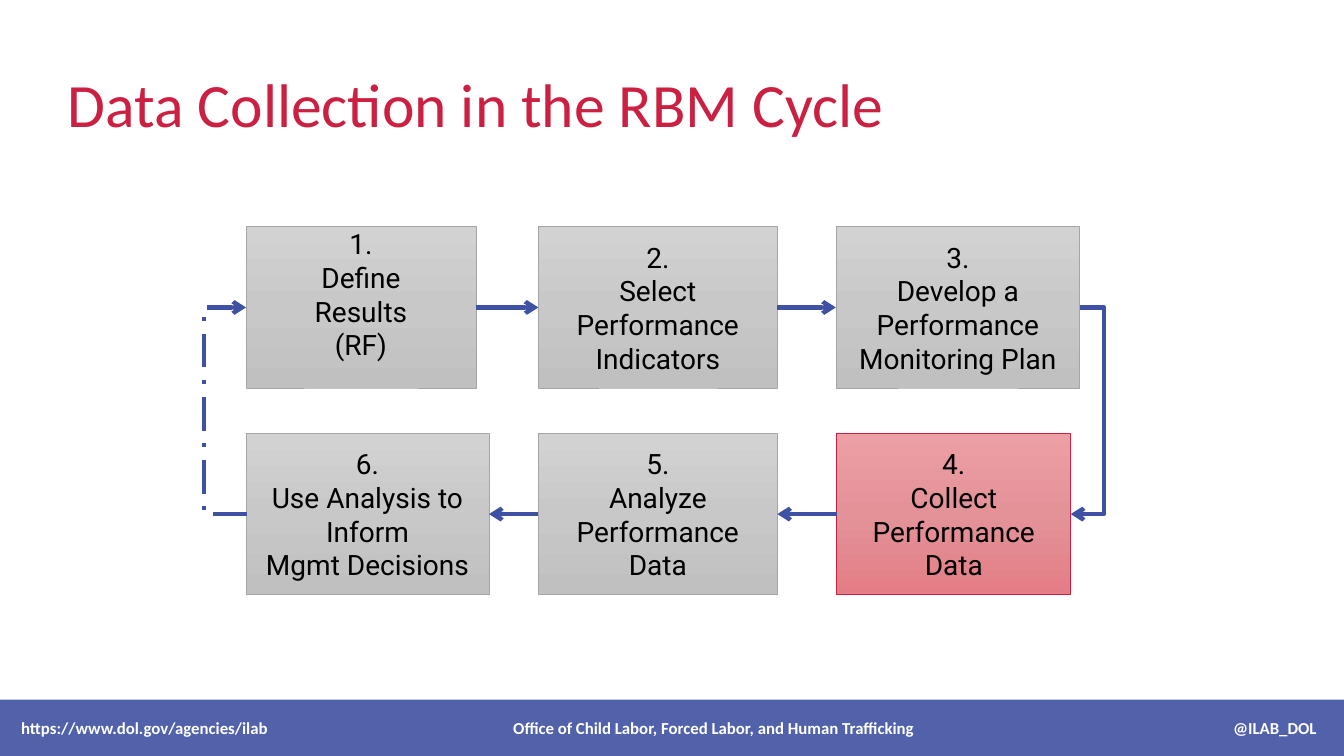
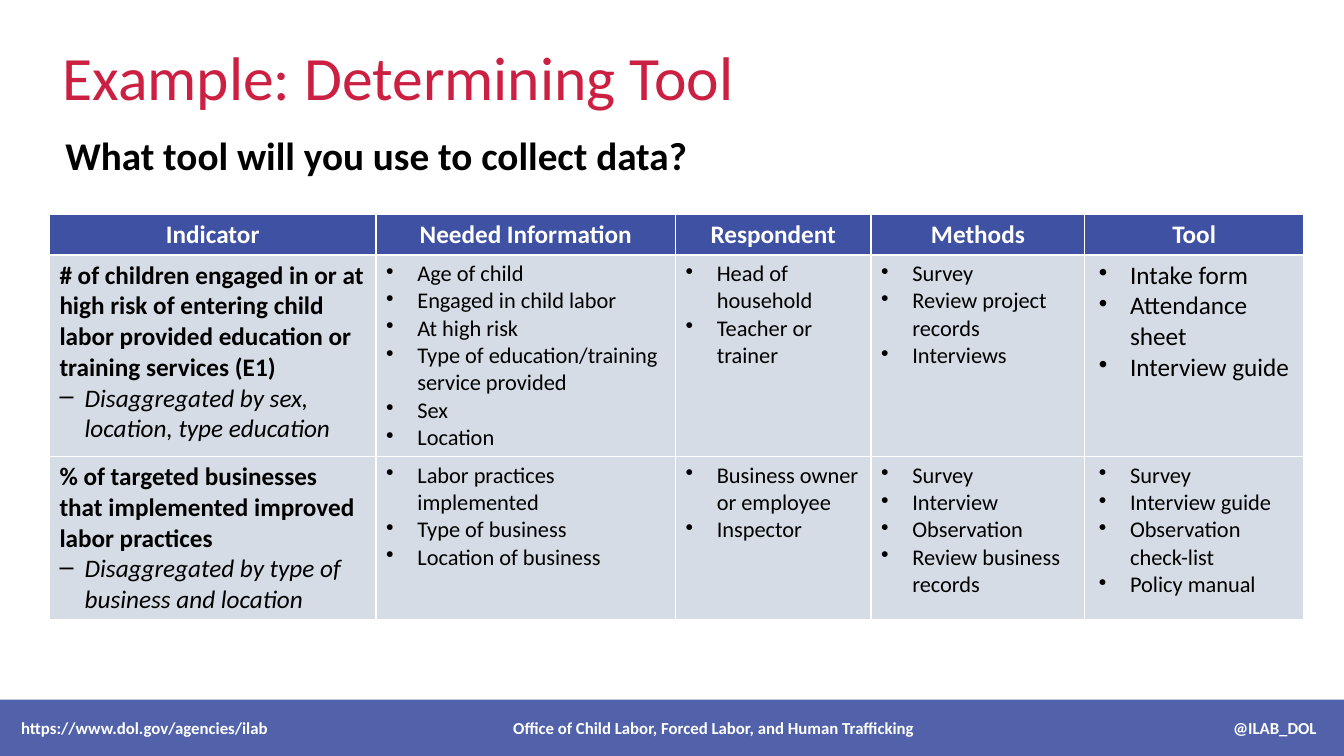
from copy import deepcopy

from lxml.etree import SubElement
from pptx import Presentation
from pptx.dml.color import RGBColor
from pptx.enum.dml import MSO_LINE
from pptx.enum.shapes import MSO_CONNECTOR, MSO_SHAPE
from pptx.enum.text import MSO_ANCHOR, MSO_AUTO_SIZE, PP_ALIGN
from pptx.oxml.ns import qn
from pptx.util import Inches, Pt

COLORS = {
    "red": "CB2042",
    "blue": "3F51A2",
    "gray": "A5A5A5",
    "cell": "D6DCE5",
    "black": "000000",
    "white": "FFFFFF",
}
GRAY_STEP = (("D2D2D2", "C8C8C8", "C0C0C0"), "gray")
RED_STEP = (("EC9FA5", "E39298", "E47D85"), "red")

SLIDE_WIDTH, SLIDE_HEIGHT = 13.33, 7.5
FOOTER_TOP, FOOTER_INSET = 6.94, 0.21
FOOTER = (
    "https://www.dol.gov/agencies/ilab",
    "Office of Child Labor, Forced Labor, and Human Trafficking",
    "@ILAB_DOL",
)
FOOTER_TABS = (("ctr", 7.08), ("r", 13.06))

CYCLE_TITLE = "Data Collection in the RBM Cycle"
STEP_HEIGHT = 1.6
TOP_ROW, BOTTOM_ROW = 2.25, 4.3
STEPS = [
    (2.44, TOP_ROW, 2.28, GRAY_STEP, ["1.", "Define", "Results", "(RF)"]),
    (5.34, TOP_ROW, 2.37, GRAY_STEP, ["2.", "Select", "Performance", "Indicators"]),
    (8.29, TOP_ROW, 2.42, GRAY_STEP, ["3.", "Develop a", "Performance", "Monitoring Plan"]),
    (8.3, BOTTOM_ROW, 2.32, RED_STEP, ["4.", "Collect", "Performance", "Data"]),
    (5.34, BOTTOM_ROW, 2.37, GRAY_STEP, ["5.", "Analyze", "Performance", "Data"]),
    (2.44, BOTTOM_ROW, 2.41, GRAY_STEP, ["6.", "Use Analysis to", "Inform", "Mgmt Decisions"]),
]
LEFT_SIDE, RIGHT_SIDE = 1, 3
STRAIGHT_ARROWS = [
    (0, RIGHT_SIDE, 1, LEFT_SIDE),
    (1, RIGHT_SIDE, 2, LEFT_SIDE),
    (3, LEFT_SIDE, 4, RIGHT_SIDE),
    (4, LEFT_SIDE, 5, RIGHT_SIDE),
]
TOP_MIDDLE = TOP_ROW + STEP_HEIGHT / 2
BOTTOM_MIDDLE = BOTTOM_ROW + STEP_HEIGHT / 2

TOOL_TITLE = "Example: Determining Tool"
QUESTION = "What tool will you use to collect data?"
COLUMN_WIDTHS = (3.24, 2.97, 1.94, 2.12, 2.17)
ROW_HEIGHTS = (0.4, 2, 1.62)
HEADINGS = ("Indicator", "Needed Information", "Respondent", "Methods", "Tool")
INDICATORS = [
    {
        "name": "# of children engaged in or at high risk of entering child labor "
                "provided education or training services (E1)",
        "split": "Disaggregated by sex, location, type education",
        "lists": [
            ["Age of child", "Engaged in child labor", "At high risk",
             "Type of education/training service provided", "Sex", "Location"],
            ["Head of household", "Teacher or trainer"],
            ["Survey", "Review project records", "Interviews"],
            ["Intake form", "Attendance sheet", "Interview guide"],
        ],
        "tool_size": 18,
    },
    {
        "name": "% of targeted businesses that implemented improved labor practices",
        "split": "Disaggregated by type of business and location",
        "lists": [
            ["Labor practices implemented", "Type of business", "Location of business"],
            ["Business owner or employee", "Inspector"],
            ["Survey", "Interview", "Observation", "Review business records"],
            ["Survey", "Interview guide", "Observation check-list", "Policy manual"],
        ],
        "tool_size": 16,
    },
]


def rgb(name):
    return RGBColor.from_string(COLORS.get(name, name))


def write(frame, text, size=16, color="black", font="Calibri", bold=False,
          italic=False, align=PP_ALIGN.LEFT, spacing=None, bullet=None, indent=0.31):
    paragraph = frame.add_paragraph() if frame.text else frame.paragraphs[0]
    paragraph.alignment = align
    if spacing:
        paragraph.line_spacing = spacing
    if bullet:
        properties = paragraph._p.get_or_add_pPr()
        properties.set("marL", str(Inches(indent)))
        properties.set("indent", str(-Inches(indent)))
        SubElement(properties, qn("a:buChar")).set("char", bullet)
    run = paragraph.add_run()
    run.text = text
    run.font.size = Pt(size)
    run.font.name = font
    run.font.bold = bold
    run.font.italic = italic
    run.font.color.rgb = rgb(color)
    return paragraph


def add_rectangle(slide, left, top, width, height):
    rectangle = slide.shapes.add_shape(
        MSO_SHAPE.RECTANGLE, Inches(left), Inches(top), Inches(width), Inches(height))
    rectangle.shadow.inherit = False
    return rectangle


def add_footer(slide):
    band = add_rectangle(slide, 0, FOOTER_TOP, SLIDE_WIDTH, SLIDE_HEIGHT - FOOTER_TOP)
    band.fill.solid()
    band.fill.fore_color.rgb = rgb("blue")
    band.line.fill.background()
    tint = band._element.spPr.find(".//" + qn("a:srgbClr"))
    SubElement(tint, qn("a:alpha")).set("val", "90000")
    frame = band.text_frame
    frame.margin_left = Inches(FOOTER_INSET)
    frame.vertical_anchor = MSO_ANCHOR.MIDDLE
    line = write(frame, "\t".join(FOOTER), size=12, color="white", bold=True)
    tabs = SubElement(line._p.get_or_add_pPr(), qn("a:tabLst"))
    for align, position in FOOTER_TABS:
        tab = SubElement(tabs, qn("a:tab"))
        tab.set("pos", str(Inches(position - FOOTER_INSET)))
        tab.set("algn", align)


def add_titled_slide(deck, text, left, top, width):
    slide = deck.slides.add_slide(deck.slide_layouts[5])
    title = slide.shapes.title
    title.left, title.top = Inches(left), Inches(top)
    title.width, title.height = Inches(width), Inches(1.05)
    title.text_frame.auto_size = MSO_AUTO_SIZE.NONE
    title.text_frame.vertical_anchor = MSO_ANCHOR.BOTTOM
    write(title.text_frame, text, size=44, color="red", spacing=0.9)
    add_footer(slide)
    return slide


def add_step(slide, left, top, width, look, lines):
    shades, border = look
    step = add_rectangle(slide, left, top, width, STEP_HEIGHT)
    step.fill.gradient()
    step.fill.gradient_angle = 270
    stops = step._element.spPr.find(".//" + qn("a:gsLst"))
    stops.append(deepcopy(stops[0]))
    for stop, shade, position in zip(step.fill.gradient_stops, shades, (0, 0.5, 1)):
        stop.color.rgb = rgb(shade)
        stop.position = position
    step.line.color.rgb = rgb(border)
    step.line.width = Pt(0.5)
    frame = step.text_frame
    frame.word_wrap = False
    frame.vertical_anchor = MSO_ANCHOR.MIDDLE
    for line in lines:
        write(frame, line, size=20, font="Roboto", align=PP_ALIGN.CENTER)
    return step


def style_arrow(arrow, dash=None):
    arrow.line.color.rgb = rgb("blue")
    arrow.line.width = Pt(3)
    if dash:
        arrow.line.dash_style = dash
    outline = arrow._element.spPr.find(qn("a:ln"))
    SubElement(outline, qn("a:tailEnd")).set("type", "arrow")
    SubElement(arrow._element.spPr, qn("a:effectLst"))


def add_elbow_arrow(slide, begin, end, via, turned=False, dash=None):
    first, last = (end, begin) if turned else (begin, end)
    arrow = slide.shapes.add_connector(
        MSO_CONNECTOR.ELBOW, *(Inches(value) for value in (*first, *last)))
    if turned:
        arrow.rotation = 180
    bend = (via - begin[0]) / (end[0] - begin[0])
    geometry = arrow._element.spPr.find(qn("a:prstGeom"))
    adjustments = geometry.find(qn("a:avLst"))
    if adjustments is None:
        adjustments = SubElement(geometry, qn("a:avLst"))
    guide = SubElement(adjustments, qn("a:gd"))
    guide.set("name", "adj1")
    guide.set("fmla", f"val {round(bend * 100000)}")
    style_arrow(arrow, dash)


def build_cycle(deck):
    slide = add_titled_slide(deck, CYCLE_TITLE, 0.57, 0.4, 11.24)
    steps = [add_step(slide, *step) for step in STEPS]
    steps[0].text_frame.vertical_anchor = MSO_ANCHOR.TOP
    steps[0].text_frame.margin_top = 0
    for source, source_side, target, target_side in STRAIGHT_ARROWS:
        arrow = slide.shapes.add_connector(MSO_CONNECTOR.STRAIGHT, 0, 0, 0, 0)
        arrow.begin_connect(steps[source], source_side)
        arrow.end_connect(steps[target], target_side)
        style_arrow(arrow)
    add_elbow_arrow(slide, (10.71, TOP_MIDDLE), (10.62, BOTTOM_MIDDLE), 10.95)
    add_elbow_arrow(slide, (2.45, BOTTOM_MIDDLE), (2.44, TOP_MIDDLE), 2.02,
                    turned=True, dash=MSO_LINE.LONG_DASH_DOT)


def fill_cell(cell, color):
    cell.fill.solid()
    cell.fill.fore_color.rgb = rgb(color)
    return cell.text_frame


def build_tools(deck):
    slide = add_titled_slide(deck, TOOL_TITLE, 0.52, 0.13, 11.57)
    question = slide.shapes.add_textbox(
        Inches(0.55), Inches(1.31), Inches(11.59), Inches(0.6)).text_frame
    question.word_wrap = True
    write(question, QUESTION, size=28, bold=True, spacing=0.9)

    tools = slide.shapes.add_table(
        len(ROW_HEIGHTS), len(COLUMN_WIDTHS), Inches(0.49), Inches(2.13),
        Inches(sum(COLUMN_WIDTHS)), Inches(sum(ROW_HEIGHTS))).table
    for column, width in zip(tools.columns, COLUMN_WIDTHS):
        column.width = Inches(width)
    for row, height in zip(tools.rows, ROW_HEIGHTS):
        row.height = Inches(height)
    for column, heading in enumerate(HEADINGS):
        write(fill_cell(tools.cell(0, column), "blue"), heading, size=18,
              color="white", bold=True, align=PP_ALIGN.CENTER)
    tool_column = len(HEADINGS) - 1
    for row, indicator in enumerate(INDICATORS, 1):
        frame = fill_cell(tools.cell(row, 0), "cell")
        write(frame, indicator["name"], size=18, bold=True)
        write(frame, indicator["split"], size=18, italic=True, bullet="–", indent=0.25)
        for column, items in enumerate(indicator["lists"], 1):
            frame = fill_cell(tools.cell(row, column), "cell")
            size = indicator["tool_size"] if column == tool_column else 16
            for item in items:
                write(frame, item, size=size, bullet="•")
        tools.cell(row, tool_column).margin_left = Inches(0.14)


def main():
    deck = Presentation()
    deck.slide_width, deck.slide_height = Inches(SLIDE_WIDTH), Inches(SLIDE_HEIGHT)
    build_cycle(deck)
    build_tools(deck)
    deck.save("out.pptx")


if __name__ == "__main__":
    main()
